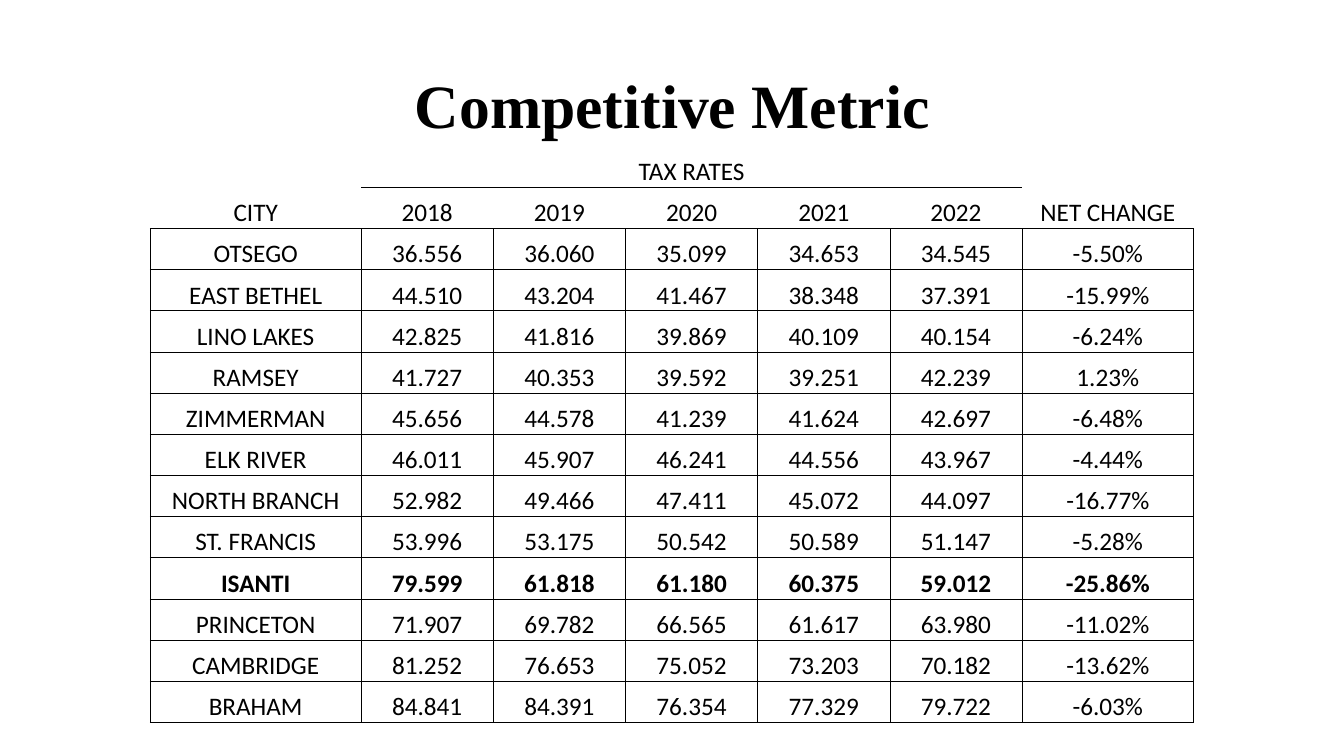
from dataclasses import dataclass
from lxml.etree import SubElement
from pptx import Presentation
from pptx.dml.color import RGBColor
from pptx.enum.text import MSO_ANCHOR, PP_ALIGN
from pptx.oxml.ns import qn
from pptx.util import Inches, Pt


@dataclass(frozen=True)
class Theme:
    ink: str = "000000"
    head: str = "Times New Roman"
    body: str = "Calibri"
    big: int = 44
    text: int = 18
    rule: float = 0.5


THEME = Theme()
YEARS = ["2018", "2019", "2020", "2021", "2022"]
BOLD = "ISANTI"
WIDTHS = [2.09] + [1.31] * len(YEARS) + [1.7]
RATES = """
OTSEGO|36.556|36.060|35.099|34.653|34.545|-5.50%
EAST BETHEL|44.510|43.204|41.467|38.348|37.391|-15.99%
LINO LAKES|42.825|41.816|39.869|40.109|40.154|-6.24%
RAMSEY|41.727|40.353|39.592|39.251|42.239|1.23%
ZIMMERMAN|45.656|44.578|41.239|41.624|42.697|-6.48%
ELK RIVER|46.011|45.907|46.241|44.556|43.967|-4.44%
NORTH BRANCH|52.982|49.466|47.411|45.072|44.097|-16.77%
ST. FRANCIS|53.996|53.175|50.542|50.589|51.147|-5.28%
ISANTI|79.599|61.818|61.180|60.375|59.012|-25.86%
PRINCETON|71.907|69.782|66.565|61.617|63.980|-11.02%
CAMBRIDGE|81.252|76.653|75.052|73.203|70.182|-13.62%
BRAHAM|84.841|84.391|76.354|77.329|79.722|-6.03%
"""


def style(para, face, size, bold):
    para.alignment = PP_ALIGN.CENTER
    font = para.font
    font.name, font.size, font.bold = face, Pt(size), bold
    font.color.rgb = RGBColor.from_string(THEME.ink)


def add_title(slide, left, top, width, height):
    title = slide.shapes.title
    title.left, title.top = Inches(left), Inches(top)
    title.width, title.height = Inches(width), Inches(height)
    frame = title.text_frame
    frame.text = "Competitive Metric"
    frame.vertical_anchor = MSO_ANCHOR.BOTTOM
    frame.paragraphs[0].line_spacing = 0.9
    style(frame.paragraphs[0], THEME.head, THEME.big, True)


def edges(row, col):
    inner = 0 < col <= len(YEARS)
    if row == 0:
        return "B" if inner else ""
    if row == 1:
        return "TB" if inner else "B"
    return "LRTB"


def add_rules(cell, shown):
    props = cell._tc.get_or_add_tcPr()
    for side in "LRTB":
        line = SubElement(props, qn(f"a:ln{side}"), w=str(Pt(THEME.rule)))
        if side in shown:
            fill = SubElement(line, qn("a:solidFill"))
            SubElement(fill, qn("a:srgbClr"), val=THEME.ink)
        else:
            SubElement(line, qn("a:noFill"))


def fill_cell(cell, text, bold, shown):
    cell.text = text
    cell.vertical_anchor = MSO_ANCHOR.BOTTOM
    cell.margin_left = cell.margin_right = cell.margin_top = Inches(0.01)
    cell.margin_bottom = 0
    style(cell.text_frame.paragraphs[0], THEME.body, THEME.text, bold)
    add_rules(cell, shown)
    cell.fill.background()


def add_rates(slide, left, top, width, height):
    rows = [["", "TAX RATES"] + [""] * len(YEARS), ["CITY", *YEARS, "NET CHANGE"]]
    rows += [line.split("|") for line in RATES.strip().splitlines()]
    box = [Inches(n) for n in (left, top, width, height)]
    table = slide.shapes.add_table(len(rows), len(WIDTHS), *box).table
    table.first_row = table.horz_banding = False
    for col, part in zip(table.columns, WIDTHS):
        col.width = Inches(width * part / sum(WIDTHS))
    for r, row in enumerate(rows):
        for c, text in enumerate(row):
            fill_cell(table.cell(r, c), text, row[0] == BOLD, edges(r, c))
    table.cell(0, 1).merge(table.cell(0, len(YEARS)))


def main():
    deck = Presentation()
    deck.slide_width, deck.slide_height = Inches(13.33), Inches(7.5)
    slide = deck.slides.add_slide(deck.slide_layouts[5])
    add_title(slide, 1.67, 0.33, 10, 1.13)
    add_rates(slide, 1.49, 1.45, 10.35, 5.72)
    deck.save("out.pptx")


if __name__ == "__main__":
    main()
